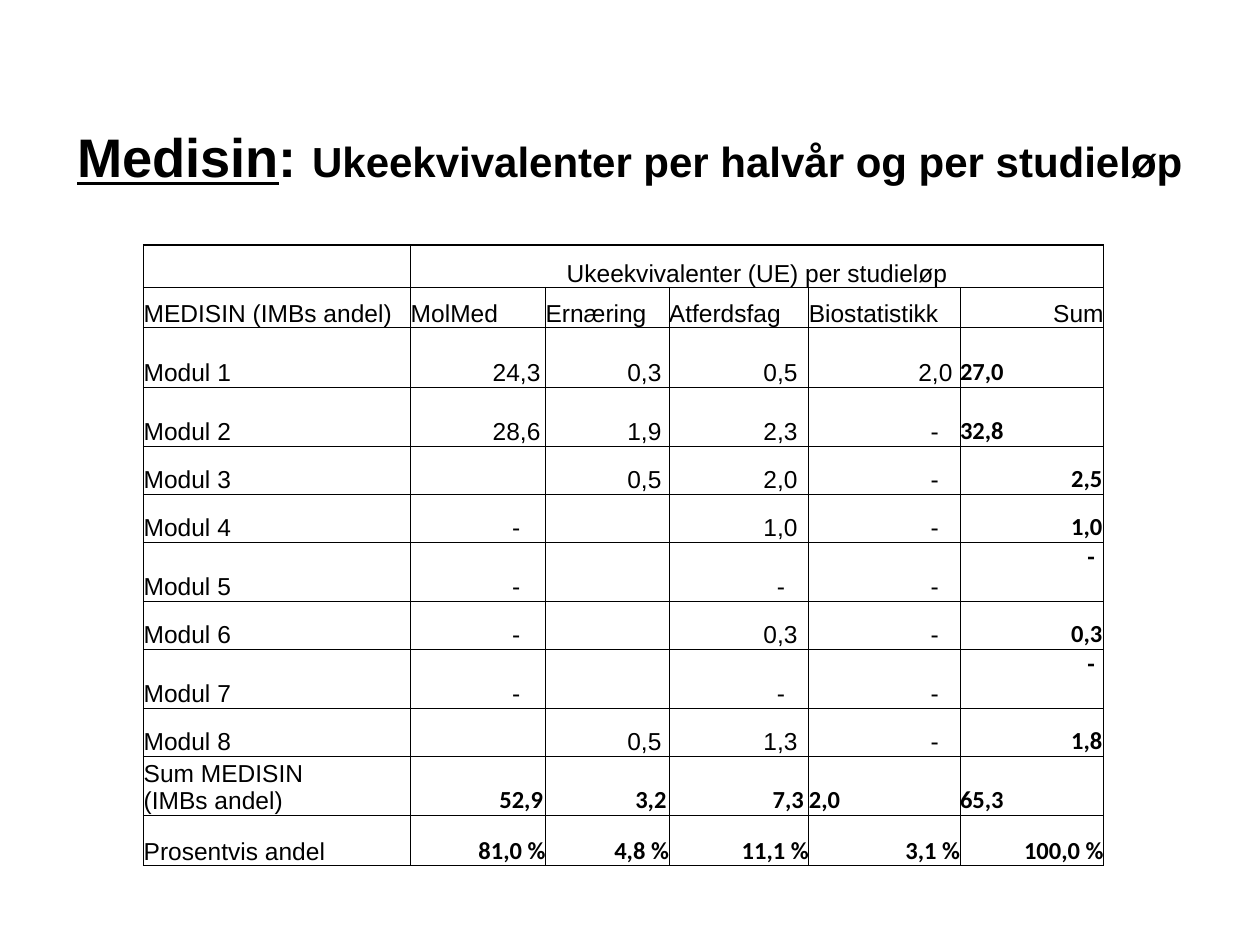
from lxml import etree
from pptx import Presentation
from pptx.dml.color import RGBColor
from pptx.enum.text import MSO_ANCHOR, MSO_AUTO_SIZE, PP_ALIGN
from pptx.oxml.ns import qn
from pptx.util import Inches, Pt

LEFT, CENTER, RIGHT = PP_ALIGN.LEFT, PP_ALIGN.CENTER, PP_ALIGN.RIGHT
TOP, MIDDLE, BOTTOM = MSO_ANCHOR.TOP, MSO_ANCHOR.MIDDLE, MSO_ANCHOR.BOTTOM
COLORS = {"ink": "000000"}

COLUMNS = [2.12, 1.07, 0.98, 1.11, 1.2, 1.14]
ROWS = [0.34, 0.32, 0.47, 0.47, 0.38, 0.38, 0.47, 0.38, 0.47, 0.38, 0.47, 0.4]
DATA = [
    ["", "Ukeekvivalenter (UE) per studieløp", "", "", "", ""],
    ["MEDISIN (IMBs andel)", "MolMed", "Ernæring", "Atferdsfag", "Biostatistikk", "Sum"],
    ["Modul 1", "24,3", "0,3", "0,5", "2,0", "27,0"],
    ["Modul 2", "28,6", "1,9", "2,3", "-", "32,8"],
    ["Modul 3", "", "0,5", "2,0", "-", "2,5"],
    ["Modul 4", "-", "", "1,0", "-", "1,0"],
    ["Modul 5", "-", "", "-", "-", "-"],
    ["Modul 6", "-", "", "0,3", "-", "0,3"],
    ["Modul 7", "-", "", "-", "-", "-"],
    ["Modul 8", "", "0,5", "1,3", "-", "1,8"],
    ["Sum MEDISIN\n(IMBs andel)", "52,9", "3,2", "7,3", "2,0", "65,3"],
    ["Prosentvis andel", "81,0 %", "4,8 %", "11,1 %", "3,1 %", "100,0 %"],
]
SUM_COL, SUM_ROW, SHARE_ROW = 5, 10, 11
LEFT_SUMS = {(2, 5), (3, 5), (10, 4), (10, 5)}
NUMBER_INSET = [0, 0.04, 0.06, 0.09, 0.06, 0.01]
DASH_INSET = [0, 0.2, 0.2, 0.19, 0.17, 0.07]
SUM_INSET = [0, 0.02, 0.02, 0.04, 0, 0]


class Deck:
    def __init__(self, prs):
        self.prs = prs
        self.s = prs.slides.add_slide(prs.slide_layouts[5])

    def box(self, x, y, w, h):
        width, height = self.prs.slide_width, self.prs.slide_height
        return int(x * width), int(y * height), int(w * width), int(h * height)

    def style(self, font, size, name="Arial", bold=False):
        font.size, font.name, font.bold = Pt(size), name, bold
        font.color.rgb = RGBColor.from_string(COLORS["ink"])

    def title(self, runs, *share):
        sp = self.s.shapes.title
        sp.left, sp.top, sp.width, sp.height = self.box(*share)
        tf = sp.text_frame
        tf.auto_size, tf.word_wrap = MSO_AUTO_SIZE.NONE, True
        tf.margin_left = tf.margin_right = 0
        tf.vertical_anchor = MIDDLE
        p = tf.paragraphs[0]
        p.alignment = CENTER
        for text, size, underline in runs:
            r = p.add_run()
            r.text = text
            self.style(r.font, size, bold=True)
            r.font.underline = underline

    def border(self, cell, side, width):
        ln = etree.SubElement(cell._tc.get_or_add_tcPr(), qn("a:ln" + side), w=str(Pt(width)))
        fill = etree.SubElement(ln, qn("a:solidFill"))
        etree.SubElement(fill, qn("a:srgbClr"), val=COLORS["ink"])

    def cell(self, cell, text, align, anchor, inset, name, bold, borders):
        for side, width in borders.items():
            self.border(cell, side, width)
        cell.fill.background()
        cell.margin_left = cell.margin_top = cell.margin_bottom = 0
        cell.margin_right = Inches(inset)
        cell.vertical_anchor = anchor
        cell.text = text
        for p in cell.text_frame.paragraphs:
            p.alignment = align
            self.style(p.font, 14, name, bold)

    def table(self, data, columns, rows, *share):
        table = self.s.shapes.add_table(len(rows), len(columns), *self.box(*share)).table
        table.first_row = table.horz_banding = False
        for column, width in zip(table.columns, columns):
            column.width = Inches(width)
        for row, height in zip(table.rows, rows):
            row.height = Inches(height)
        last_row, last_col = len(rows) - 1, len(columns) - 1
        for i, texts in enumerate(data):
            for j, text in enumerate(texts):
                borders = {
                    "L": 1 if j == 0 else 0.5,
                    "R": 1 if j == last_col else 0.5,
                    "T": 1 if i <= 1 else 0.5,
                    "B": 1 if i in (0, last_row) else 0.5,
                }
                self.cell(table.cell(i, j), text, *cell_layout(i, j, text), borders)
        table.cell(0, 1).merge(table.cell(0, last_col))


def cell_layout(i, j, text):
    if i == 0:
        return CENTER, BOTTOM, 0, "Arial", False
    if i == 1 or j == 0:
        return RIGHT if j == SUM_COL else LEFT, BOTTOM, 0, "Arial", False
    total = j == SUM_COL or i >= SUM_ROW
    align = LEFT if (i, j) in LEFT_SUMS else RIGHT
    anchor = TOP if j == SUM_COL and text == "-" else BOTTOM
    if i == SHARE_ROW:
        inset = 0
    elif i == SUM_ROW:
        inset = SUM_INSET[j]
    else:
        inset = (DASH_INSET if text == "-" else NUMBER_INSET)[j]
    return align, anchor, inset, "Calibri" if total else "Arial", total


def main():
    prs = Presentation()
    prs.slide_width, prs.slide_height = Inches(10), Inches(7.5)
    deck = Deck(prs)
    deck.title(
        [("Medisin", 31, True), (": ", 31, False),
         ("Ukeekvivalenter per halvår og per studieløp", 24, False)],
        0.05, 0.08, 0.9, 0.17)
    deck.table(DATA, COLUMNS, ROWS, 0.114, 0.259, 0.764, 0.657)
    prs.save("out.pptx")


if __name__ == "__main__":
    main()
